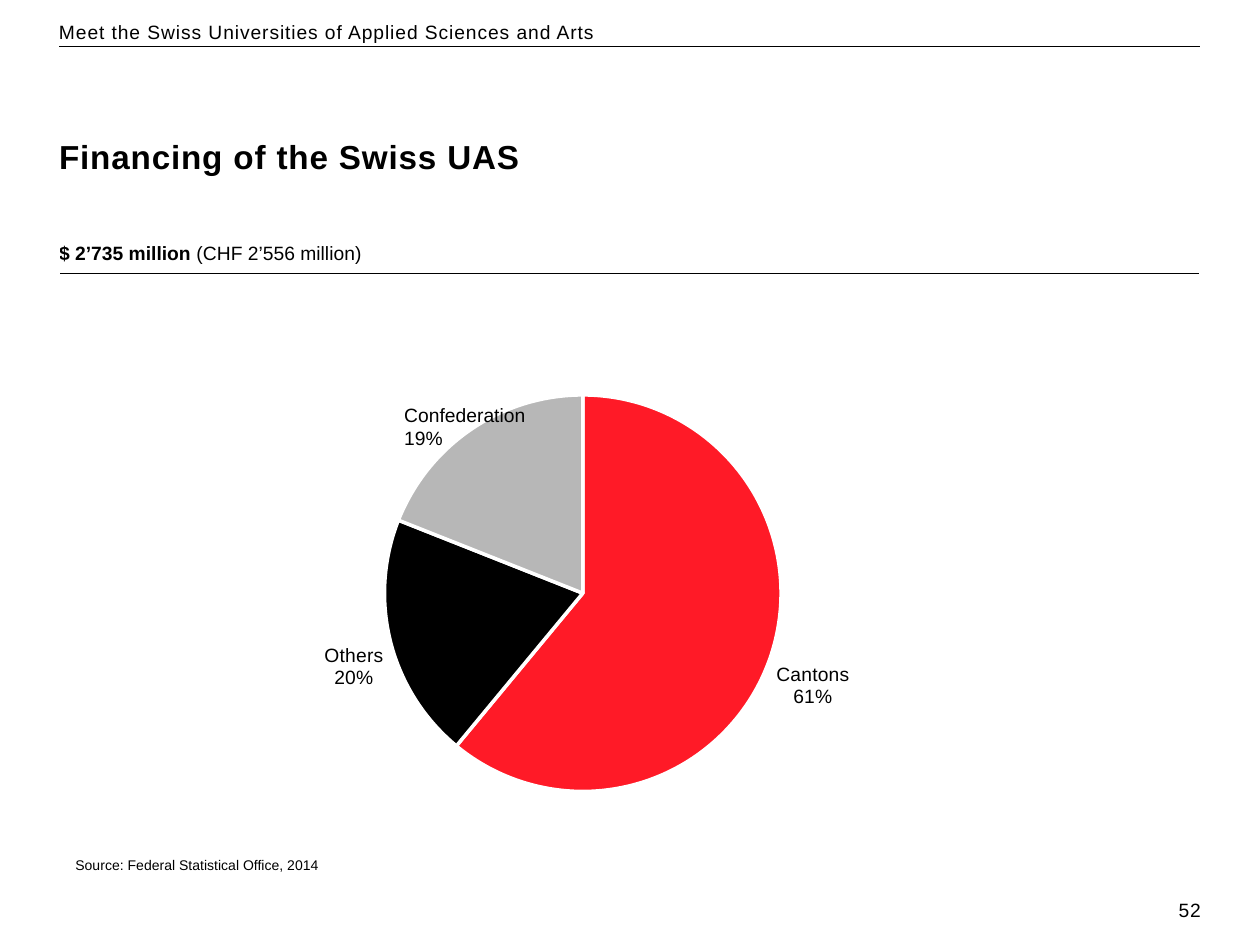
from typing import NamedTuple

from lxml.etree import SubElement
from pptx import Presentation
from pptx.chart.data import CategoryChartData
from pptx.dml.color import RGBColor
from pptx.enum.chart import XL_CHART_TYPE as Kind, XL_LABEL_POSITION as Pos
from pptx.enum.shapes import MSO_CONNECTOR as Link
from pptx.enum.text import MSO_ANCHOR as Anchor, MSO_AUTO_SIZE as Auto, PP_ALIGN as Align
from pptx.oxml import parse_xml
from pptx.oxml.ns import nsdecls, qn
from pptx.util import Cm, Pt

BLACK = RGBColor(0, 0, 0)
WHITE = RGBColor(255, 255, 255)
RED = RGBColor(0xFF, 0x1A, 0x27)
GREY = RGBColor(0xA6, 0xA6, 0xA6)
FONT = "Arial"
LEFT, WIDE = 1.19, 23.01


class Part(NamedTuple):
    text: str
    bold: bool = False


class Note(NamedTuple):
    box: tuple
    lines: tuple
    size: float = 11
    lead: float | None = None
    after: float | None = None
    track: int = 0
    align: Align = Align.LEFT
    inset: bool = False
    wrap: bool = True
    auto: Auto = Auto.NONE


class Slice(NamedTuple):
    name: str
    share: int
    color: RGBColor


NOTES = (
    Note((LEFT, 0.41, WIDE, 0.94),
         ("Meet the Swiss Universities of Applied Sciences and Arts",),
         lead=13.2, after=8, track=50),
    Note((22.71, 18.11, 1.5, 0.51), ("52",), lead=13.2, track=50, align=Align.RIGHT),
    Note((8.15, 8.13, 4.39, 1.42), ("Confederation", "19%"), auto=Auto.SHAPE_TO_FIT_TEXT),
    Note((1.27, 17.15, 5.49, 0.61), ("Source: Federal Statistical Office, 2014",),
         size=8, inset=True, wrap=False, auto=Auto.SHAPE_TO_FIT_TEXT),
)
SLICES = (
    Slice("Cantons", 61, RED),
    Slice("Others", 20, BLACK),
    Slice("Confederation", 19, GREY),
)


def add_run(para, part: Part, size: float, track: int = 0) -> None:
    run = para.add_run()
    run.text = part.text
    font = run.font
    font.name, font.size, font.bold = FONT, Pt(size), part.bold
    font.color.rgb = BLACK
    if track:
        font._element.set("spc", str(track))


def clear_inset(frame) -> None:
    frame.margin_left = frame.margin_right = 0
    frame.margin_top = frame.margin_bottom = 0


def add_note(slide, note: Note) -> None:
    frame = slide.shapes.add_textbox(*map(Cm, note.box)).text_frame
    frame.word_wrap, frame.auto_size = note.wrap, note.auto
    if not note.inset:
        clear_inset(frame)
    para = frame.paragraphs[0]
    para.alignment = note.align
    if note.lead:
        para.line_spacing = Pt(note.lead)
    if note.after:
        para.space_after = Pt(note.after)
    for i, line in enumerate(note.lines):
        if i:
            para.add_line_break()
        add_run(para, Part(line), note.size, note.track)


def add_rule(slide, top: float) -> None:
    rule = slide.shapes.add_connector(
        Link.STRAIGHT, Cm(LEFT), Cm(top), Cm(LEFT + WIDE), Cm(top))
    rule.line.color.rgb = BLACK
    rule.line.width = Pt(0.6)
    SubElement(rule._element.spPr, qn("a:effectLst"))


def set_title(slide, text: str) -> None:
    title = slide.shapes.title
    title.left, title.top, title.width, title.height = map(Cm, (LEFT, 2.74, WIDE, 1.07))
    frame = title.text_frame
    clear_inset(frame)
    frame.vertical_anchor, frame.auto_size = Anchor.TOP, Auto.NONE
    para = frame.paragraphs[0]
    para.alignment, para.line_spacing = Align.LEFT, Pt(22.8)
    add_run(para, Part(text, True), 19, 50)


def add_total(slide, parts: tuple[Part, ...]) -> None:
    """Add the one-cell table with the total sum."""
    table = slide.shapes.add_table(1, 1, *map(Cm, (LEFT, 4.62, 22.99, 0.89))).table
    table.first_row = table.horz_banding = False
    cell = table.cell(0, 0)
    cell.margin_left = cell.margin_right = cell.margin_top = cell.margin_bottom = 0
    cell.vertical_anchor = Anchor.MIDDLE
    cell.fill.solid()
    cell.fill.fore_color.rgb = WHITE
    para = cell.text_frame.paragraphs[0]
    para.line_spacing = Pt(15)
    for part in parts:
        add_run(para, part, 11)
    props = cell._tc.get_or_add_tcPr()
    for i, side in enumerate("LRTB"):
        color, width = (BLACK, 0.5) if side == "B" else (WHITE, 1)
        props.insert(i, parse_xml(
            f'<a:ln{side} {nsdecls("a")} w="{Pt(width)}"><a:solidFill>'
            f'<a:srgbClr val="{color}"/></a:solidFill></a:ln{side}>'))


def add_pie(slide, slices: tuple[Slice, ...]) -> None:
    data = CategoryChartData()
    data.categories = [s.name for s in slices]
    data.add_series("Series 1", [s.share for s in slices])
    box = map(Cm, (5.26, 7.59, 13.11, 8.74))
    chart = slide.shapes.add_chart(Kind.PIE, *box, data).chart
    chart.has_title = chart.has_legend = False
    chart.font.name, chart.font.size = "Calibri", Pt(18)
    chart.font.color.rgb = BLACK
    plot = chart.plots[0]
    plot.vary_by_categories = True
    series = plot.series[0]
    for i, part in enumerate(slices):
        look = series.points[i].format
        look.fill.solid()
        look.fill.fore_color.rgb = part.color
        look.line.color.rgb = WHITE
        look.line.width = Pt(2)
        if part.color == GREY:
            tint = look.fill._xPr.find(".//" + qn("a:srgbClr"))
            SubElement(tint, qn("a:alpha")).set("val", "80000")

    labels = series.data_labels
    labels.show_value = False
    labels.show_category_name = labels.show_percentage = True
    labels.number_format, labels.number_format_is_linked = "0%", False
    labels.position = Pos.OUTSIDE_END
    labels.font.name, labels.font.size = FONT, Pt(11)
    labels.font.color.rgb = BLACK
    tree = labels._element
    tree.find(qn("c:showBubbleSize")).addnext(
        parse_xml(f'<c:separator {nsdecls("c")}>\n</c:separator>'))
    # The last slice is named by a text box instead.
    tree.insert(0, parse_xml(
        f'<c:dLbl {nsdecls("c")}><c:idx val="{len(slices) - 1}"/>'
        '<c:delete val="1"/></c:dLbl>'))

    area = chart._chartSpace.chart.plotArea
    for old in area.findall(qn("c:layout")):
        area.remove(old)
    spots = "".join(f'<c:{k} val="{v}"/>' for k, v in (
        ("layoutTarget", "inner"), ("xMode", "edge"), ("yMode", "edge"),
        ("x", 0.19), ("y", 0.04), ("w", 0.61), ("h", 0.92)))
    area.insert(0, parse_xml(
        f'<c:layout {nsdecls("c")}><c:manualLayout>{spots}</c:manualLayout></c:layout>'))


def main() -> None:
    deck = Presentation()
    deck.slide_width, deck.slide_height = Cm(25.4), Cm(19.05)
    slide = deck.slides.add_slide(deck.slide_layouts[5])
    add_rule(slide, 0.94)
    set_title(slide, "Financing of the Swiss UAS")
    add_total(slide, (Part("$ 2’735 million ", True), Part("(CHF 2’556 million)")))
    add_pie(slide, SLICES)
    for note in NOTES:
        add_note(slide, note)
    deck.save("out.pptx")


if __name__ == "__main__":
    main()
